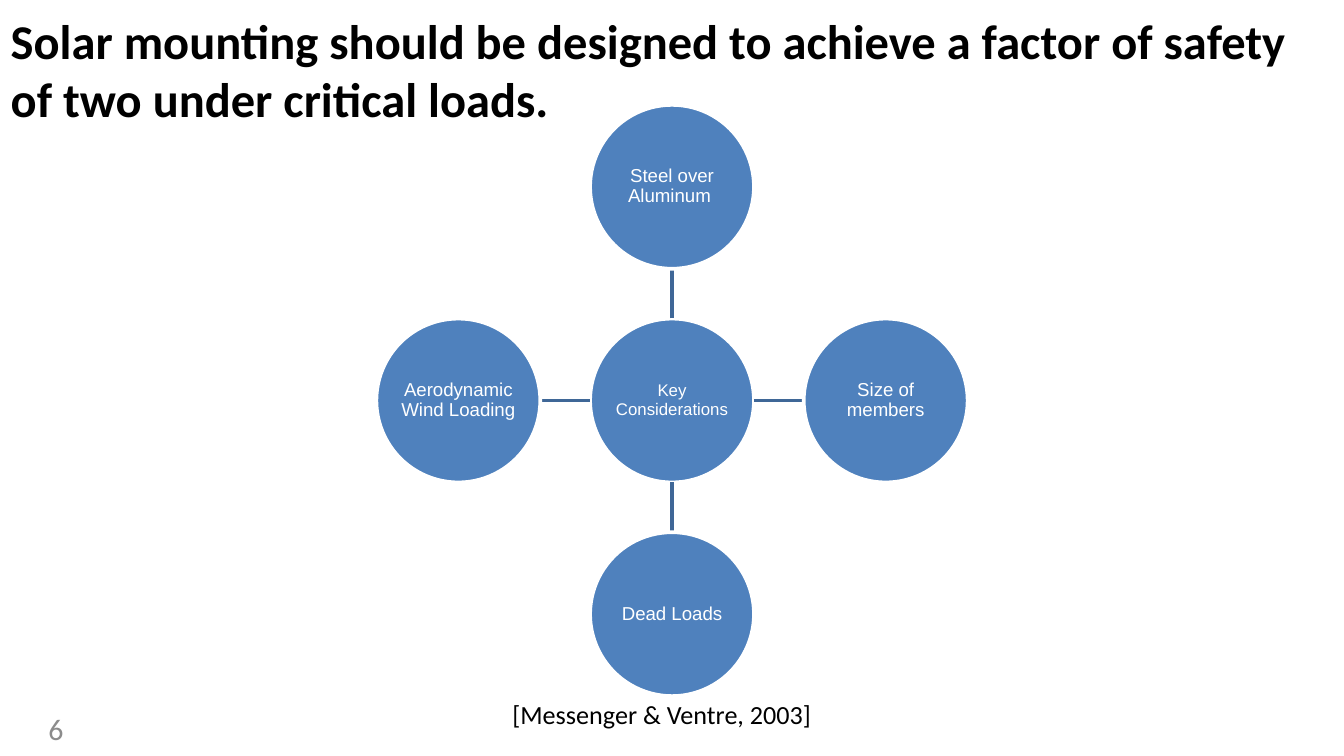
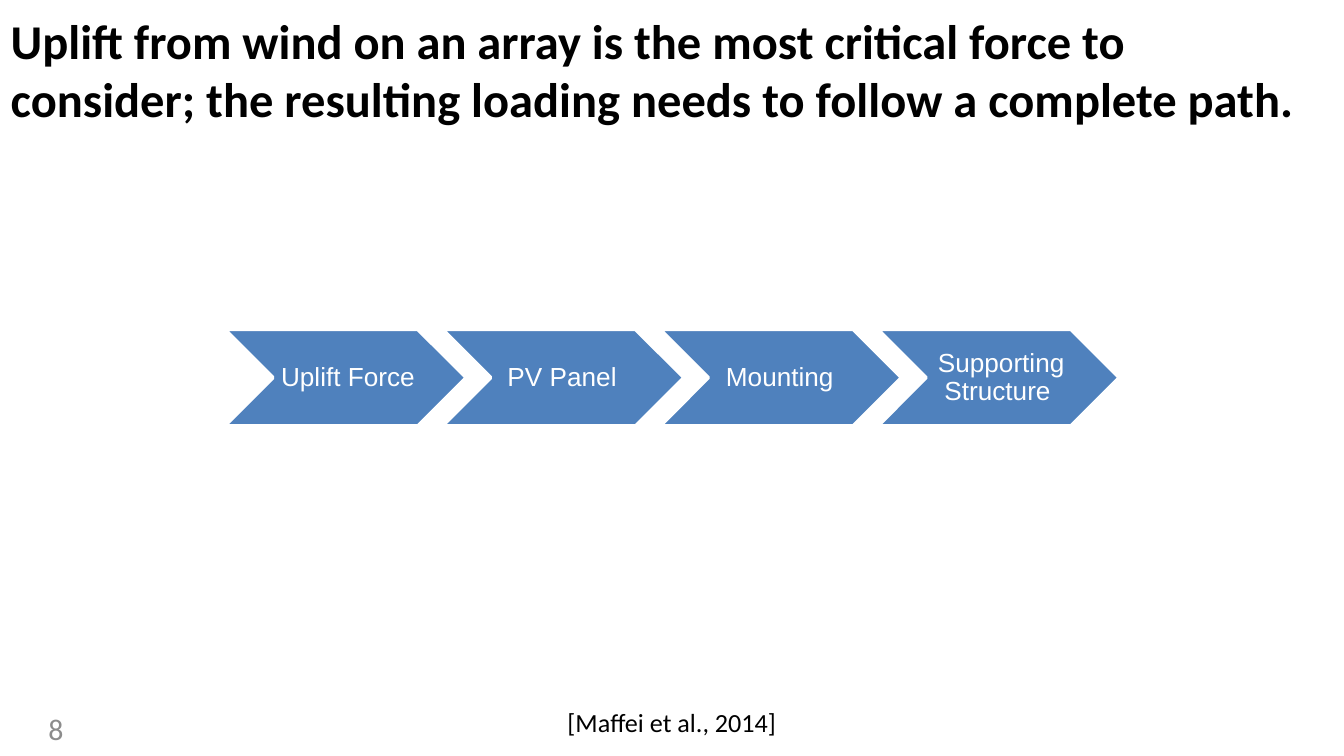
from lxml import etree
from pptx import Presentation
from pptx.dml.color import RGBColor
from pptx.enum.shapes import MSO_CONNECTOR, MSO_SHAPE
from pptx.enum.text import MSO_ANCHOR, PP_ALIGN
from pptx.oxml.ns import qn
from pptx.util import Inches, Pt

BLUE = RGBColor(0x4F, 0x81, 0xBD)
DARK_BLUE = RGBColor(0x3F, 0x67, 0x97)
WHITE = RGBColor(0xFF, 0xFF, 0xFF)
BLACK = RGBColor(0, 0, 0)
GREY = RGBColor(0x8C, 0x8C, 0x8C)

TITLE = {"size": Pt(26), "name": "Calibri", "bold": True}
CITATION = {"size": Pt(14), "name": "Calibri"}
NUMBER = {"size": Pt(16), "name": "Calibri"}
DEFAULT_INSETS = (0.1, 0.05, 0.1, 0.05)
NO_INSETS = (0, 0, 0, 0)


def write(sp, text, font, color, align, insets, anchor=MSO_ANCHOR.TOP):
    tf = sp.text_frame
    tf.word_wrap = True
    tf.vertical_anchor = anchor
    for side, inset in zip(("left", "top", "right", "bottom"), insets):
        setattr(tf, f"margin_{side}", Inches(inset))
    p = tf.paragraphs[0]
    p.alignment = align
    r = p.add_run()
    r.text = text
    for key, value in font.items():
        setattr(r.font, key, value)
    r.font.color.rgb = color
    return p


def add_node(s, kind, box, text, size, insets):
    sp = s.shapes.add_shape(kind, *map(Inches, box))
    sp.shadow.inherit = False
    sp.fill.solid()
    sp.fill.fore_color.rgb = BLUE
    sp.line.color.rgb = WHITE
    sp.line.width = Pt(2)
    font = {"size": Pt(size), "name": "Arial"}
    p = write(sp, text, font, WHITE, PP_ALIGN.CENTER, insets, MSO_ANCHOR.MIDDLE)
    p.line_spacing = 0.9


prs = Presentation()
prs.slide_width = Inches(10)
prs.slide_height = prs.slide_width * 9 // 16

pages = [
    ("Solar mounting should be designed to achieve a factor of safety of two under critical loads.",
     "6", "[Messenger & Ventre, 2003]", (3.29, 5.2, 3.27, 0.24), NO_INSETS),
    ("Uplift from wind on an array is the most critical force to consider; "
     "the resulting loading needs to follow a complete path.",
     "8", "[Maffei et al., 2014]", (3.7, 5.21, 2.6, 0.34), DEFAULT_INSETS),
]
slides = []
for title, number, citation, citation_box, citation_insets in pages:
    s = prs.slides.add_slide(prs.slide_layouts[6])
    slides.append(s)
    for text, box, font, color, align, insets in [
        (title, (0.08, 0.08, 9.69, 0.88), TITLE, BLACK, PP_ALIGN.LEFT, NO_INSETS),
        (citation, citation_box, CITATION, BLACK, PP_ALIGN.CENTER, citation_insets),
        (number, (0.07, 5.24, 0.5, 0.37), NUMBER, GREY, PP_ALIGN.RIGHT, DEFAULT_INSETS),
    ]:
        write(s.shapes.add_textbox(*map(Inches, box)), text, font, color, align, insets)

considerations_slide, path_slide = slides

HUB_X, HUB_Y = 5, 2.98
DIAMETER = 1.22
RADIUS = DIAMETER / 2
REACH = 1.59
considerations = [
    ("Key Considerations", 0, 0, 9),
    ("Steel over Aluminum ", 0, -1, 10),
    ("Size of members", 1, 0, 10),
    ("Dead Loads", 0, 1, 10),
    ("Aerodynamic Wind Loading ", -1, 0, 10),
]
for text, dx, dy, size in considerations:
    if dx or dy:
        ends = [(HUB_X + dx * d, HUB_Y + dy * d) for d in (RADIUS, REACH - RADIUS)]
        spoke = considerations_slide.shapes.add_connector(
            MSO_CONNECTOR.STRAIGHT, *(Inches(v) for end in ends for v in end))
        spoke.line.color.rgb = DARK_BLUE
        spoke.line.width = Pt(2)
        etree.SubElement(spoke._element.spPr, qn("a:effectLst"))
    box = (HUB_X + dx * REACH - RADIUS, HUB_Y + dy * REACH - RADIUS, DIAMETER, DIAMETER)
    add_node(considerations_slide, MSO_SHAPE.OVAL, box, text, size, NO_INSETS)

STEP = 1.62
load_path = ["Uplift Force", "PV Panel ", "Mounting ", "Supporting Structure "]
for i, text in enumerate(load_path):
    add_node(path_slide, MSO_SHAPE.CHEVRON, (1.67 + i * STEP, 2.45, 1.8, 0.72),
             text, 14, (0.06, 0.02, 0.02, 0.02))

prs.save("out.pptx")
